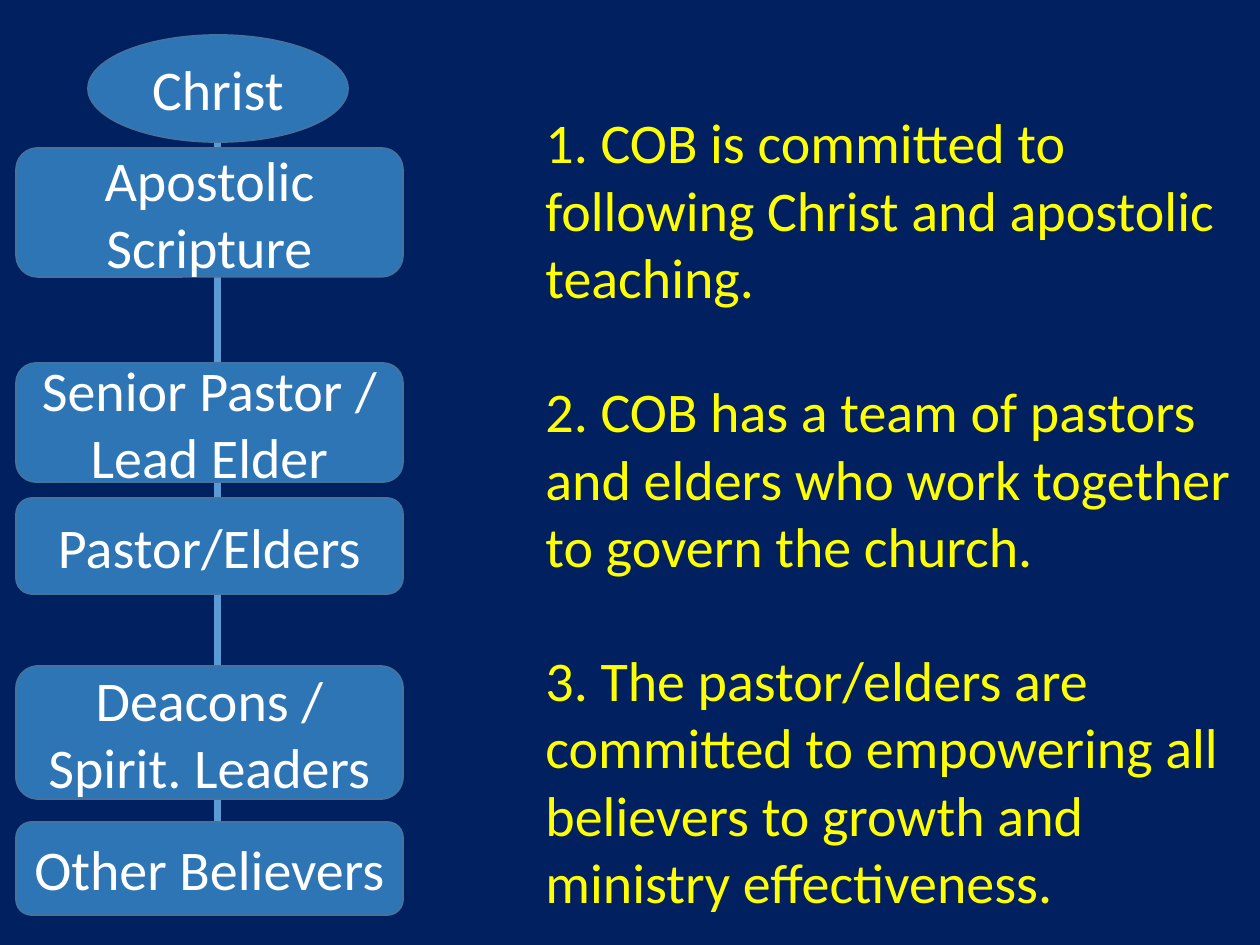
import pptx
import pptx.dml.color
import pptx.enum.shapes
import pptx.enum.text
import pptx.oxml
import pptx.util

SCALE = 914400 / 126
NAVY = pptx.dml.color.RGBColor(0x00, 0x20, 0x60)
BLUE = pptx.dml.color.RGBColor(0x2E, 0x75, 0xB6)
EDGE = pptx.dml.color.RGBColor(0x43, 0x73, 0x9E)
SKY = pptx.dml.color.RGBColor(0x5B, 0x9B, 0xD5)
WHITE = pptx.dml.color.RGBColor(0xFF, 0xFF, 0xFF)
YELLOW = pptx.dml.color.RGBColor(0xFF, 0xFF, 0x00)
SHAPES = pptx.enum.shapes.MSO_SHAPE

RANKS = [
    ("Apostolic Scripture", 113, 129),
    ("Senior Pastor / Lead Elder", 328, 119),
    ("Pastor/Elders", 463, 96),
    ("Deacons / Spirit. Leaders", 631, 133),
    ("Other Believers", 787, 93),
]
COMMITMENTS = [
    "1. COB is committed to following Christ and apostolic teaching.",
    "2. COB has a team of pastors and elders who work together to govern the church.",
    "3. The pastor/elders are committed to empowering all believers to growth "
    "and ministry effectiveness.",
]


def px(length):
    """Turn pixels into EMU."""
    return pptx.util.Emu(round(length * SCALE))


def style(paragraph, color):
    """Give a paragraph the slide's type in one colour."""
    paragraph.font.name = "Calibri"
    paragraph.font.size = pptx.util.Pt(32)
    paragraph.font.color.rgb = color


def add_rank(slide, kind, label, left, top, width, height):
    """Add one labelled level of the church order."""
    rank = slide.shapes.add_shape(kind, px(left), px(top), px(width), px(height))
    rank.shadow.inherit = False
    rank.fill.solid()
    rank.fill.fore_color.rgb = BLUE
    rank.line.color.rgb = EDGE
    rank.line.width = pptx.util.Pt(1)
    rank.text_frame.word_wrap = True
    rank.text_frame.vertical_anchor = pptx.enum.text.MSO_ANCHOR.MIDDLE
    paragraph = rank.text_frame.paragraphs[0]
    paragraph.text = label
    paragraph.alignment = pptx.enum.text.PP_ALIGN.CENTER
    style(paragraph, WHITE)


def add_hierarchy(slide, left, top, width):
    """Draw the spine with Christ at the head and the ranks below."""
    spine_x = px(left + 202)
    spine = slide.shapes.add_connector(
        pptx.enum.shapes.MSO_CONNECTOR.STRAIGHT,
        spine_x, px(top + 106), spine_x, px(top + 789),
    )
    spine.line.color.rgb = SKY
    spine.line.width = pptx.util.Pt(4)
    spine._element.spPr.append(pptx.oxml.parse_xml(
        '<a:effectLst xmlns:a="http://schemas.openxmlformats.org/drawingml/2006/main"/>'
    ))
    add_rank(slide, SHAPES.OVAL, "Christ", left + 72, top, 260, 107)
    for label, offset, height in RANKS:
        add_rank(slide, SHAPES.ROUNDED_RECTANGLE, label, left, top + offset, width, height)


def add_commitments(slide, left, top, width, height):
    """Write the numbered commitments, each one line apart."""
    frame = slide.shapes.add_textbox(px(left), px(top), px(width), px(height)).text_frame
    frame.word_wrap = True
    frame.auto_size = pptx.enum.text.MSO_AUTO_SIZE.SHAPE_TO_FIT_TEXT
    frame.margin_top = px(73)
    for index, commitment in enumerate(COMMITMENTS):
        paragraph = frame.add_paragraph() if index else frame.paragraphs[0]
        paragraph.text = commitment
        style(paragraph, YELLOW)
        if index:
            paragraph.space_before = pptx.util.Pt(38.4)


def main():
    """Build and save the slide."""
    deck = pptx.Presentation()
    deck.slide_width = px(1260)
    deck.slide_height = px(945)
    slide = deck.slides.add_slide(deck.slide_layouts[6])
    slide.background.fill.solid()
    slide.background.fill.fore_color.rgb = NAVY
    add_hierarchy(slide, 16, 35, 387)
    add_commitments(slide, 533, 35, 727, 895)
    deck.save("out.pptx")


if __name__ == "__main__":
    main()
